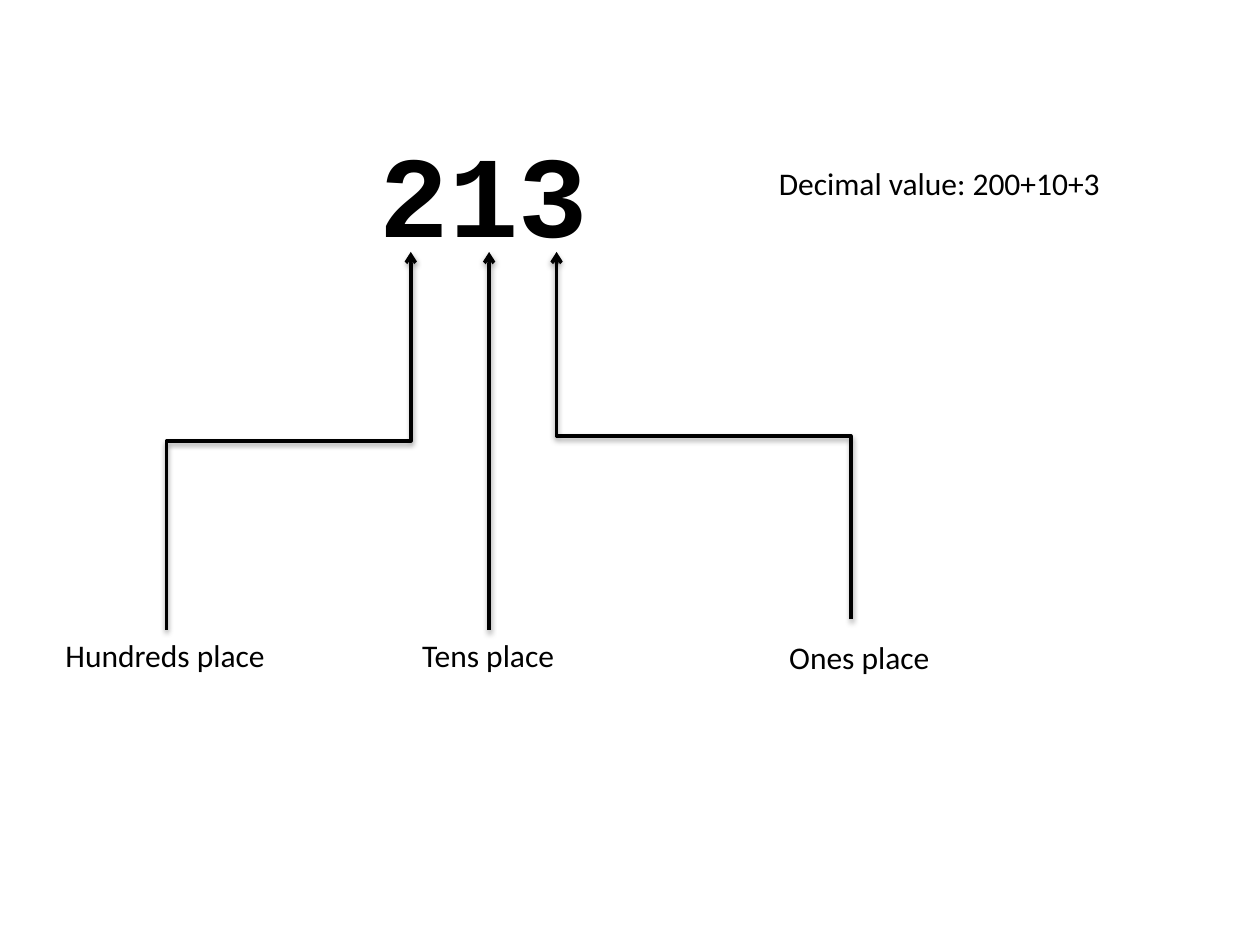
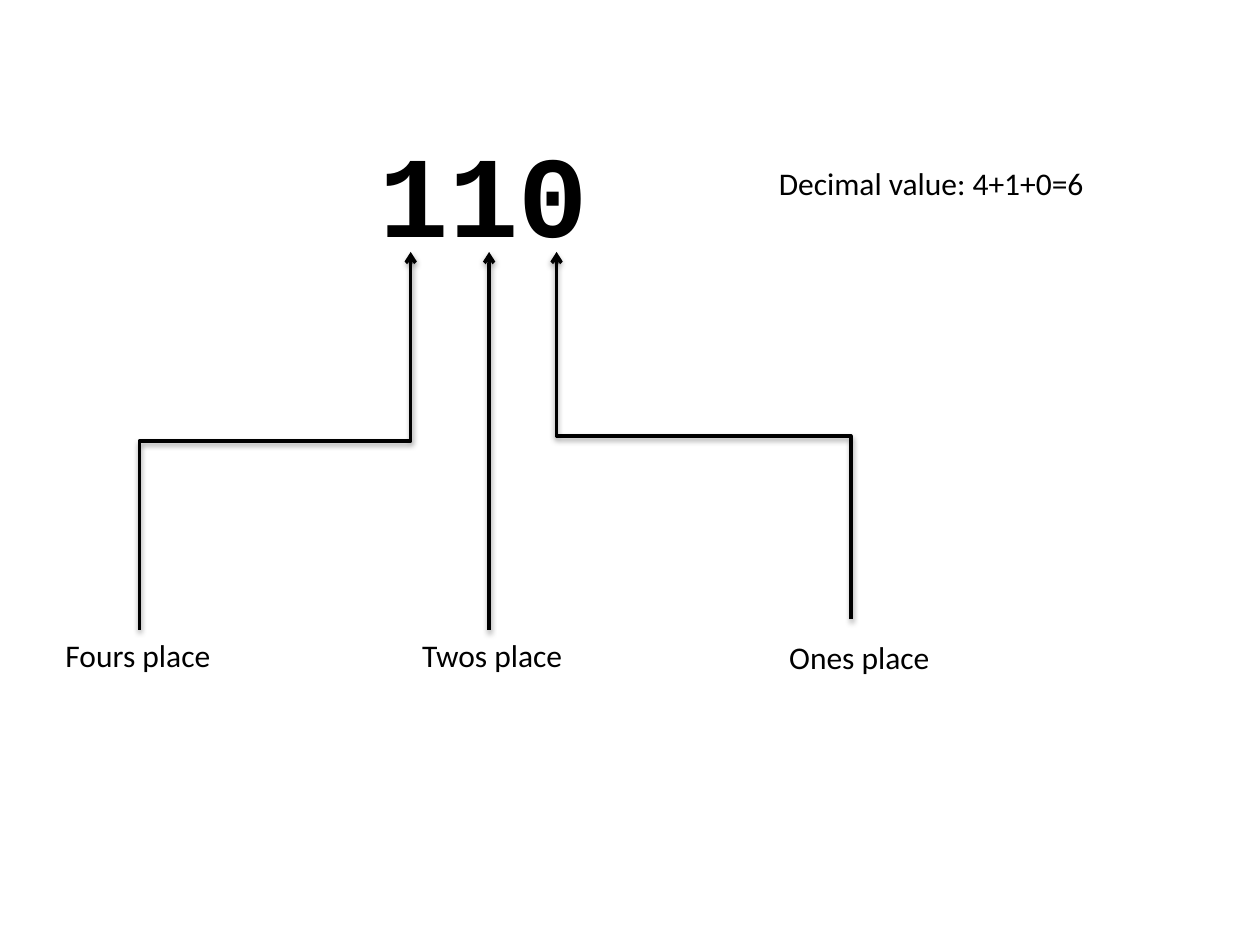
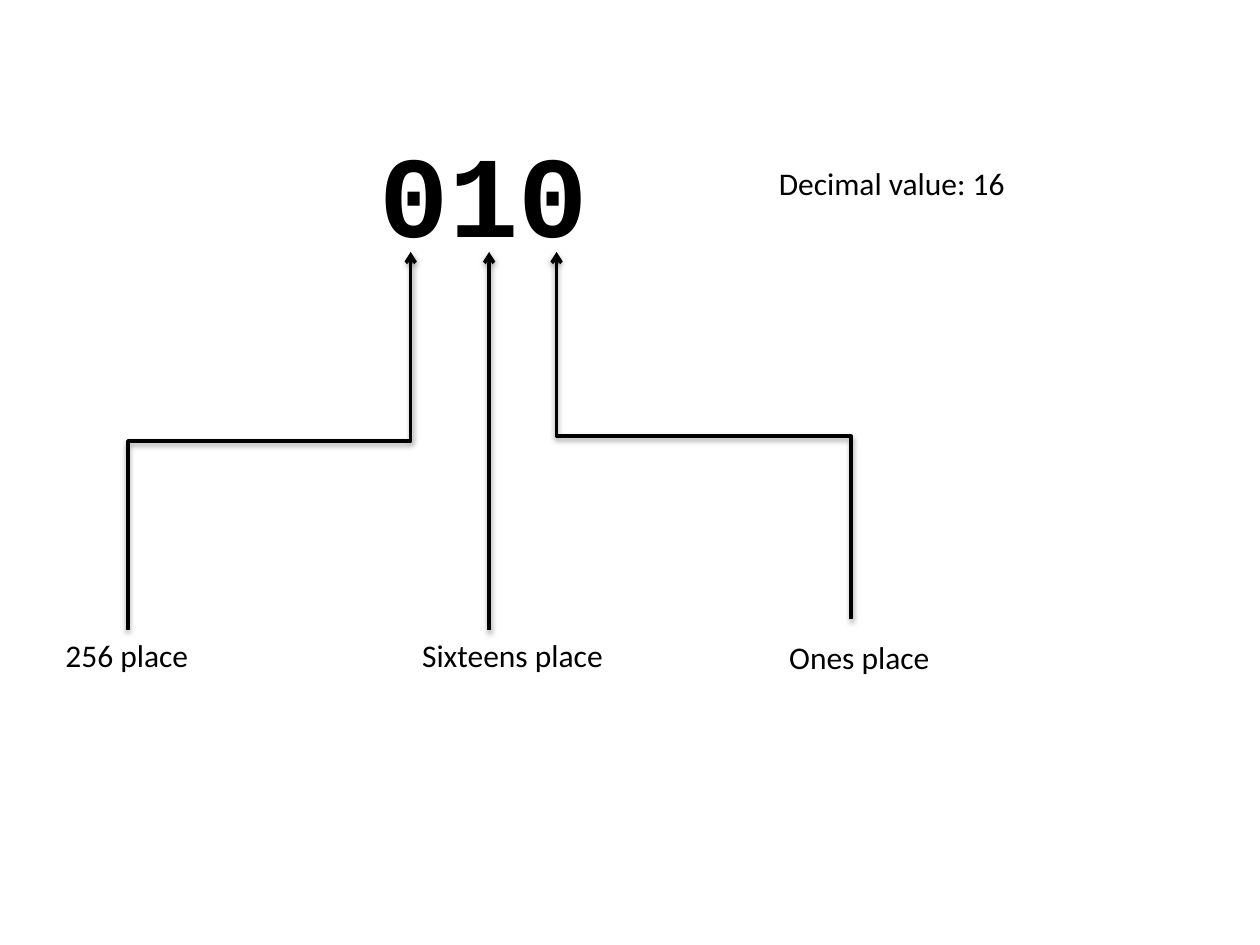
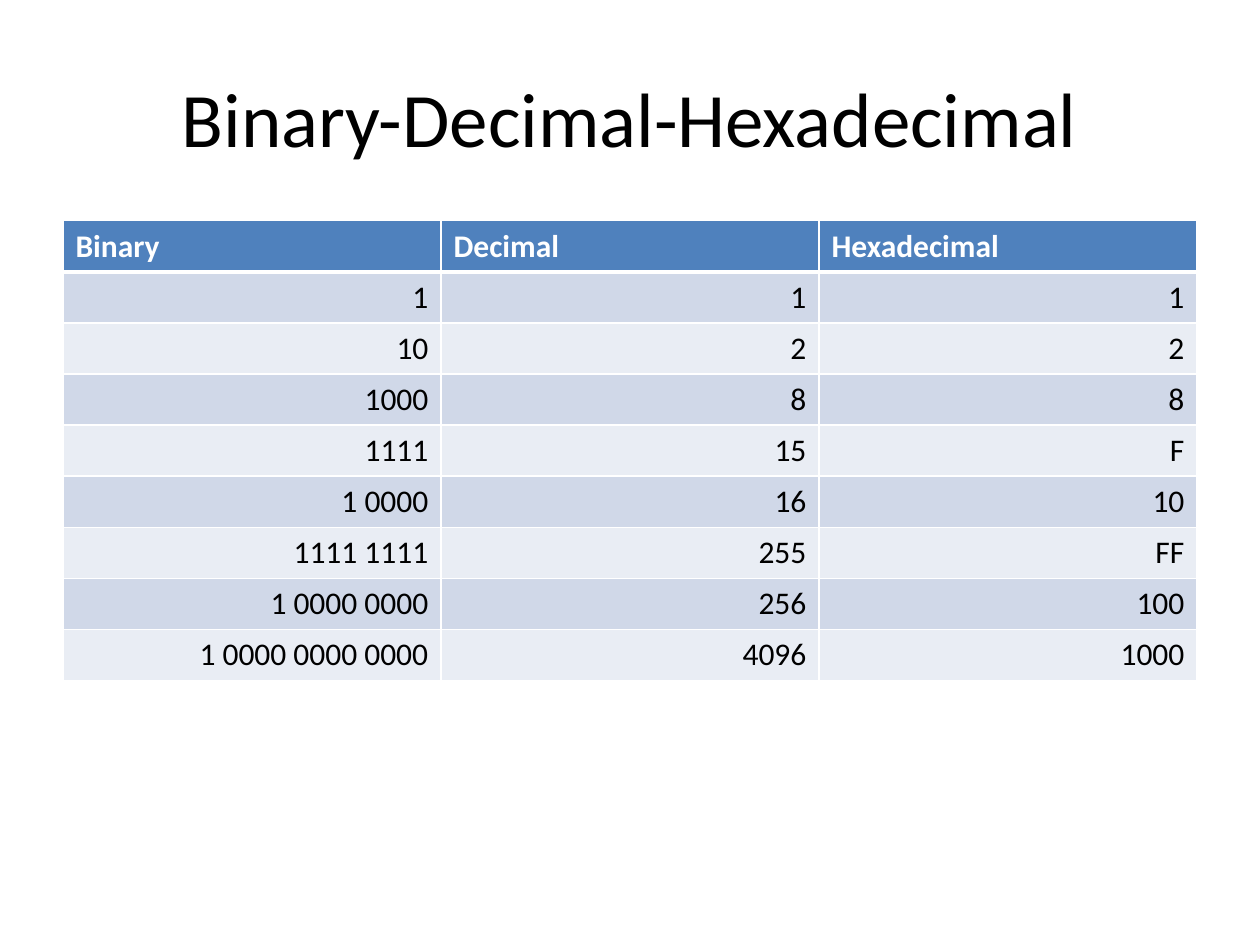
from dataclasses import dataclass
from typing import Optional

import lxml.etree
import pptx
import pptx.dml.color
import pptx.enum.shapes
import pptx.enum.text
import pptx.oxml
import pptx.oxml.ns
import pptx.presentation
import pptx.shapes.autoshape
import pptx.shapes.connector
import pptx.slide
import pptx.table
import pptx.util

Cm = pptx.util.Cm
Pt = pptx.util.Pt
RGB = pptx.dml.color.RGBColor
Align = pptx.enum.text.PP_ALIGN
Anchor = pptx.enum.text.MSO_ANCHOR
ConnectorKind = pptx.enum.shapes.MSO_CONNECTOR


@dataclass(frozen=True)
class Theme:
    ink: RGB = RGB(0x00, 0x00, 0x00)
    paper: RGB = RGB(0xFF, 0xFF, 0xFF)
    header: RGB = RGB(0x4F, 0x81, 0xBD)
    bands: tuple[RGB, RGB] = (RGB(0xD0, 0xD8, 0xE8), RGB(0xE9, 0xED, 0xF4))
    body_font: str = "Calibri"
    digit_font: str = "Courier New"
    body_size: int = Pt(18)
    title_size: int = Pt(44)
    digit_size: int = Pt(66)
    arrow_width: int = Pt(2)
    border: int = Pt(1)
    header_border: int = Pt(3)


THEME = Theme()


@dataclass(frozen=True)
class Label:
    text: str
    width: float


@dataclass(frozen=True)
class PlaceValue:
    digits: str
    value: Label
    high: Label
    middle: Label
    low: Label = Label("Ones place", 3.38)


@dataclass(frozen=True)
class Point:
    x: float
    y: float


PLACE_VALUES = [
    PlaceValue("213", Label("Decimal value: 200+10+3", 7.06),
               Label("Hundreds place", 4.57), Label("Tens place", 3.2)),
    PlaceValue("110", Label("Decimal value: 4+1+0=6", 6.73),
               Label("Fours place", 3.48), Label("Twos place", 3.38)),
    PlaceValue("010", Label("Decimal value: 16", 5.13),
               Label("256 place", 3.02), Label("Sixteens place", 4.19)),
]

NUMBER_ROWS = [
    ("Binary", "Decimal", "Hexadecimal"),
    ("1", "1", "1"),
    ("10", "2", "2"),
    ("1000", "8", "8"),
    ("1111", "15", "F"),
    ("1 0000", "16", "10"),
    ("1111 1111", "255", "FF"),
    ("1 0000 0000", "256", "100"),
    ("1 0000 0000 0000", "4096", "1000"),
]

HIGH_LABEL = Point(1.07, 12.7)
MIDDLE_LABEL = Point(8.26, 12.7)
LOW_LABEL = Point(15.66, 12.73)
VALUE_LABEL = Point(15.45, 3.18)
HIGH_DIGIT, MIDDLE_DIGIT, LOW_DIGIT = (Point(x, 5.08) for x in (8.28, 9.86, 11.22))
LOW_START = Point(17.15, 12.49)
LABEL_HEIGHT = 1.02


def add_text(page: pptx.slide.Slide, at: Point, width: float, height: float, text: str,
             size: int = THEME.body_size, font: str = THEME.body_font,
             bold: bool = False) -> pptx.shapes.autoshape.Shape:
    box = page.shapes.add_textbox(Cm(at.x), Cm(at.y), Cm(width), Cm(height))
    box.text_frame.word_wrap = True
    para = box.text_frame.paragraphs[0]
    para.text = text
    para.font.name = font
    para.font.size = size
    para.font.bold = bold
    para.font.color.rgb = THEME.ink
    return box


def add_label(page: pptx.slide.Slide, at: Point, label: Label) -> pptx.shapes.autoshape.Shape:
    box = add_text(page, at, label.width, LABEL_HEIGHT, label.text)
    box.text_frame.word_wrap = False
    box.text_frame.auto_size = pptx.enum.text.MSO_AUTO_SIZE.SHAPE_TO_FIT_TEXT
    return box


def style_arrow(arrow: pptx.shapes.connector.Connector) -> None:
    arrow.line.color.rgb = THEME.ink
    arrow.line.width = THEME.arrow_width
    lxml.etree.SubElement(arrow.line._get_or_add_ln(), pptx.oxml.ns.qn("a:tailEnd"), type="arrow")
    arrow.element.spPr.append(pptx.oxml.parse_xml(
        f'<a:effectLst {pptx.oxml.ns.nsdecls("a")}>'
        '<a:outerShdw blurRad="40000" dist="20000" dir="5400000" rotWithShape="0">'
        f'<a:srgbClr val="{THEME.ink}"><a:alpha val="38000"/></a:srgbClr>'
        '</a:outerShdw></a:effectLst>'))


def add_straight_arrow(page: pptx.slide.Slide, start: Point,
                       end: Point) -> pptx.shapes.connector.Connector:
    arrow = page.shapes.add_connector(
        ConnectorKind.STRAIGHT, Cm(start.x), Cm(start.y), Cm(end.x), Cm(end.y))
    style_arrow(arrow)
    return arrow


def add_bent_arrow(page: pptx.slide.Slide, start: Point, end: Point) -> None:
    center = Point((start.x + end.x) / 2, (start.y + end.y) / 2)
    side = 1 if start.x < end.x else -1
    half_run = side * (start.y - end.y) / 2
    half_rise = abs(end.x - start.x) / 2
    arrow = page.shapes.add_connector(
        ConnectorKind.ELBOW,
        Cm(center.x + half_run), Cm(center.y + half_rise),
        Cm(center.x - half_run), Cm(center.y - half_rise))
    arrow.rotation = 90 if side == 1 else 270
    style_arrow(arrow)


def add_place_value_page(page: pptx.slide.Slide, number: PlaceValue) -> None:
    digits = add_text(page, Point(7.41, 2.33), 16.51, 3.39, number.digits,
                      THEME.digit_size, THEME.digit_font, True)
    digits.text_frame.paragraphs[0].space_before = Pt(11)

    high_start = Point(HIGH_LABEL.x + number.high.width / 2, HIGH_LABEL.y)
    add_bent_arrow(page, high_start, HIGH_DIGIT)
    add_bent_arrow(page, LOW_START, LOW_DIGIT)
    add_label(page, HIGH_LABEL, number.high)
    add_label(page, LOW_LABEL, number.low)

    arrow = add_straight_arrow(page, Point(MIDDLE_DIGIT.x, MIDDLE_LABEL.y), MIDDLE_DIGIT)
    middle_box = add_label(page, MIDDLE_LABEL, number.middle)
    label_center = MIDDLE_LABEL.x + number.middle.width / 2
    if abs(label_center - MIDDLE_DIGIT.x) < 0.01:
        arrow.begin_connect(middle_box, 0)
    add_label(page, VALUE_LABEL, number.value)


def set_borders(cell: pptx.table._Cell, top: int, bottom: int) -> None:
    widths = {"lnL": THEME.border, "lnR": THEME.border, "lnT": top, "lnB": bottom}
    for tag, width in widths.items():
        cell._tc.get_or_add_tcPr().append(pptx.oxml.parse_xml(
            f'<a:{tag} {pptx.oxml.ns.nsdecls("a")} w="{width}"><a:solidFill>'
            f'<a:srgbClr val="{THEME.paper}"/></a:solidFill></a:{tag}>'))


def style_cell(cell: pptx.table._Cell, row: int, text: str) -> None:
    is_header = row == 0
    set_borders(cell,
                THEME.header_border if row == 1 else THEME.border,
                THEME.header_border if is_header else THEME.border)
    cell.fill.solid()
    cell.fill.fore_color.rgb = THEME.header if is_header else THEME.bands[(row - 1) % 2]
    para = cell.text_frame.paragraphs[0]
    para.text = text
    para.alignment = Align.LEFT if is_header else Align.RIGHT
    para.font.name = THEME.body_font
    para.font.size = THEME.body_size
    para.font.bold = is_header
    para.font.color.rgb = THEME.paper if is_header else THEME.ink


def add_number_table_page(page: pptx.slide.Slide) -> None:
    title = add_text(page, Point(1.27, 0.76), 22.86, 3.18,
                     "Binary-Decimal-Hexadecimal", THEME.title_size)
    title.text_frame.vertical_anchor = Anchor.MIDDLE
    title.text_frame.paragraphs[0].alignment = Align.CENTER

    row_height = Cm(1.03)
    table = page.shapes.add_table(
        len(NUMBER_ROWS), len(NUMBER_ROWS[0]), Cm(1.27), Cm(4.45), Cm(22.86),
        row_height * len(NUMBER_ROWS)).table
    for row, texts in enumerate(NUMBER_ROWS):
        table.rows[row].height = row_height
        for column, text in enumerate(texts):
            style_cell(table.cell(row, column), row, text)


def add_page(deck: pptx.presentation.Presentation) -> pptx.slide.Slide:
    page = deck.slides.add_slide(deck.slide_layouts[6])
    page.background.fill.solid()
    page.background.fill.fore_color.rgb = THEME.paper
    return page


def main() -> None:
    deck = pptx.Presentation()
    deck.slide_width = Cm(25.4)
    deck.slide_height = Cm(19.05)
    for number in PLACE_VALUES:
        add_place_value_page(add_page(deck), number)
    add_number_table_page(add_page(deck))
    deck.save("out.pptx")


if __name__ == "__main__":
    main()
